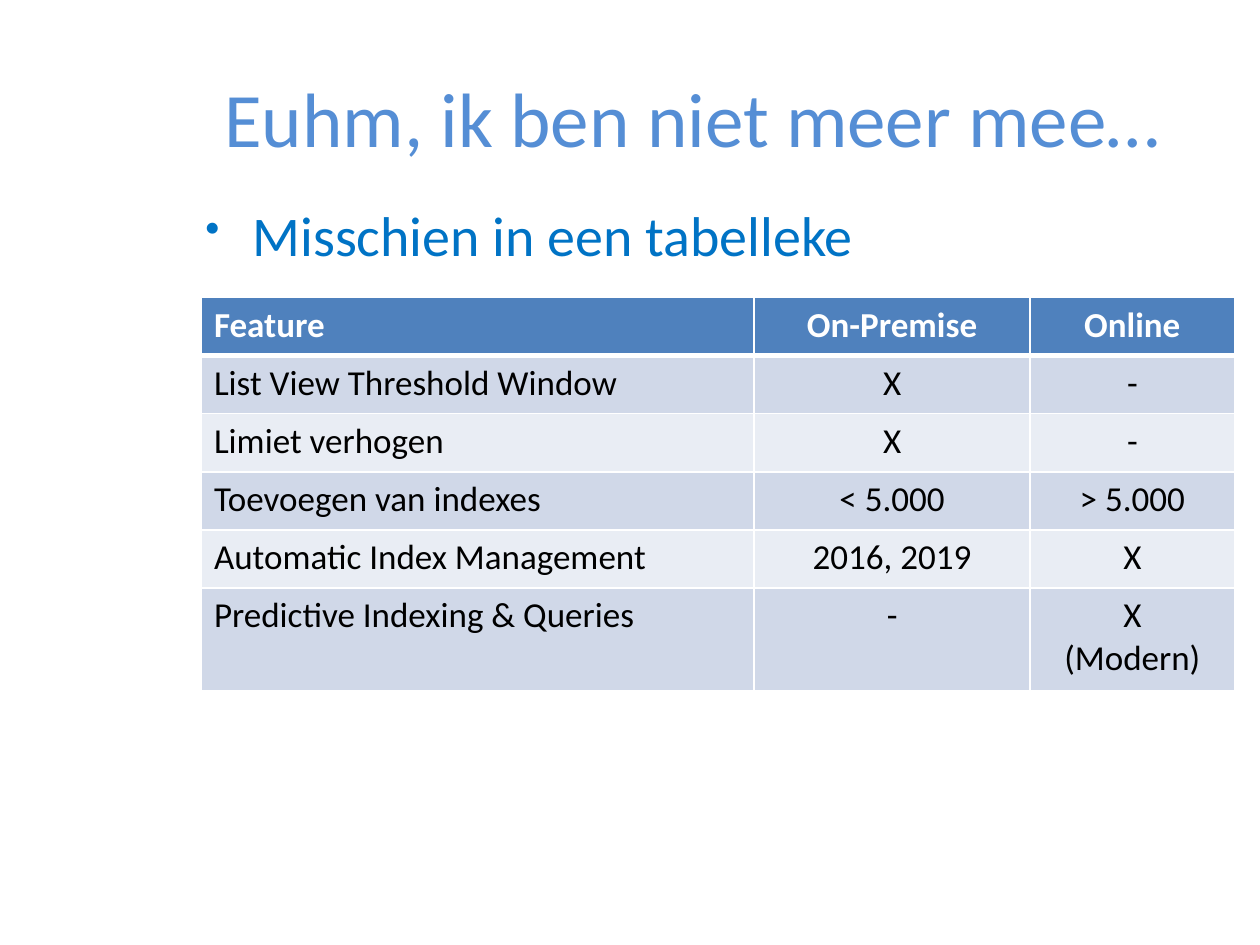
from collections import namedtuple
from dataclasses import dataclass

from lxml import etree
from pptx import Presentation
from pptx.dml.color import RGBColor
from pptx.enum import text
from pptx.oxml import ns
from pptx.util import Cm, Pt

Box = namedtuple("Box", "left top width height")


@dataclass(frozen=True)
class Theme:
    font: str = "Calibri"
    title: str = "558ED5"
    bullet: str = "0073C5"
    header: str = "4F81BD"
    bands: tuple = ("D0D8E8", "E9EDF4")
    light: str = "FFFFFF"
    dark: str = "000000"
    title_size: int = 44
    bullet_size: int = 32
    table_size: int = 20


THEME = Theme()

FEATURES = [
    ("Feature", "On-Premise", "Online"),
    ("List View Threshold Window", "X", "-"),
    ("Limiet verhogen", "X", "-"),
    ("Toevoegen van indexes", "< 5.000", "> 5.000"),
    ("Automatic Index Management", "2016, 2019", "X"),
    ("Predictive Indexing & Queries", "-", "X\n(Modern)"),
]
COLUMN_SHARES = (0.535, 0.267, 0.198)
ROW_HEIGHT = 1.17


def write(paragraph, wording, size, color, bold=False):
    paragraph.text = wording
    for run in paragraph.runs:
        run.font.name = THEME.font
        run.font.size = Pt(size)
        run.font.bold = bold
        run.font.color.rgb = RGBColor.from_string(color)


def add_text_frame(slide, box, anchor):
    frame = slide.shapes.add_textbox(*map(Cm, box)).text_frame
    frame.word_wrap = True
    frame.vertical_anchor = anchor
    return frame


def add_title(slide, box, wording):
    frame = add_text_frame(slide, box, text.MSO_ANCHOR.MIDDLE)
    write(frame.paragraphs[0], wording, THEME.title_size, THEME.title)


def add_bullet(slide, box, wording):
    paragraph = add_text_frame(slide, box, text.MSO_ANCHOR.TOP).paragraphs[0]
    # Hanging indent with a small bullet
    properties = paragraph._p.get_or_add_pPr()
    indent = Cm(0.95)
    properties.set("marL", str(indent))
    properties.set("indent", str(-indent))
    etree.SubElement(properties, ns.qn("a:buSzPct"), val="75000")
    etree.SubElement(properties, ns.qn("a:buChar"), char="•")
    write(paragraph, wording, THEME.bullet_size, THEME.bullet)


def set_borders(cell, bottom_width):
    properties = cell._tc.get_or_add_tcPr()
    for side, width in (("L", 1), ("R", 1), ("T", 1), ("B", bottom_width)):
        line = etree.SubElement(properties, ns.qn(f"a:ln{side}"), w=str(Pt(width)))
        fill = etree.SubElement(line, ns.qn("a:solidFill"))
        etree.SubElement(fill, ns.qn("a:srgbClr"), val=THEME.light)


def add_feature_table(slide, box, rows):
    shape = slide.shapes.add_table(len(rows), len(rows[0]), *map(Cm, box))
    table = shape.table
    for column, share in zip(table.columns, COLUMN_SHARES):
        column.width = Cm(box.width * share)

    # The last row takes the height that remains
    for row in table.rows:
        row.height = Cm(ROW_HEIGHT)
    table.rows[len(rows) - 1].height = Cm(box.height - ROW_HEIGHT * (len(rows) - 1))

    for row_index, row in enumerate(rows):
        is_header = row_index == 0
        fill = THEME.header if is_header else THEME.bands[(row_index - 1) % 2]
        color = THEME.light if is_header else THEME.dark
        for column_index, wording in enumerate(row):
            cell = table.cell(row_index, column_index)
            set_borders(cell, 3 if is_header else 1)
            cell.fill.solid()
            cell.fill.fore_color.rgb = RGBColor.from_string(fill)
            paragraph = cell.text_frame.paragraphs[0]
            write(paragraph, wording, THEME.table_size, color, is_header)
            if column_index > 0:
                paragraph.alignment = text.PP_ALIGN.CENTER


def main():
    presentation = Presentation()
    presentation.slide_width, presentation.slide_height = Cm(25.4), Cm(19.05)
    slide = presentation.slides.add_slide(presentation.slide_layouts[6])

    add_title(slide, Box(4.27, 0.76, 20.24, 3.18), "Euhm, ik ben niet meer mee…")
    add_feature_table(slide, Box(4.06, 6, 20.83, 7.92), FEATURES)
    add_bullet(slide, Box(3.89, 3.91, 16, 1.63), "Misschien in een tabelleke")

    presentation.save("out.pptx")


if __name__ == "__main__":
    main()
